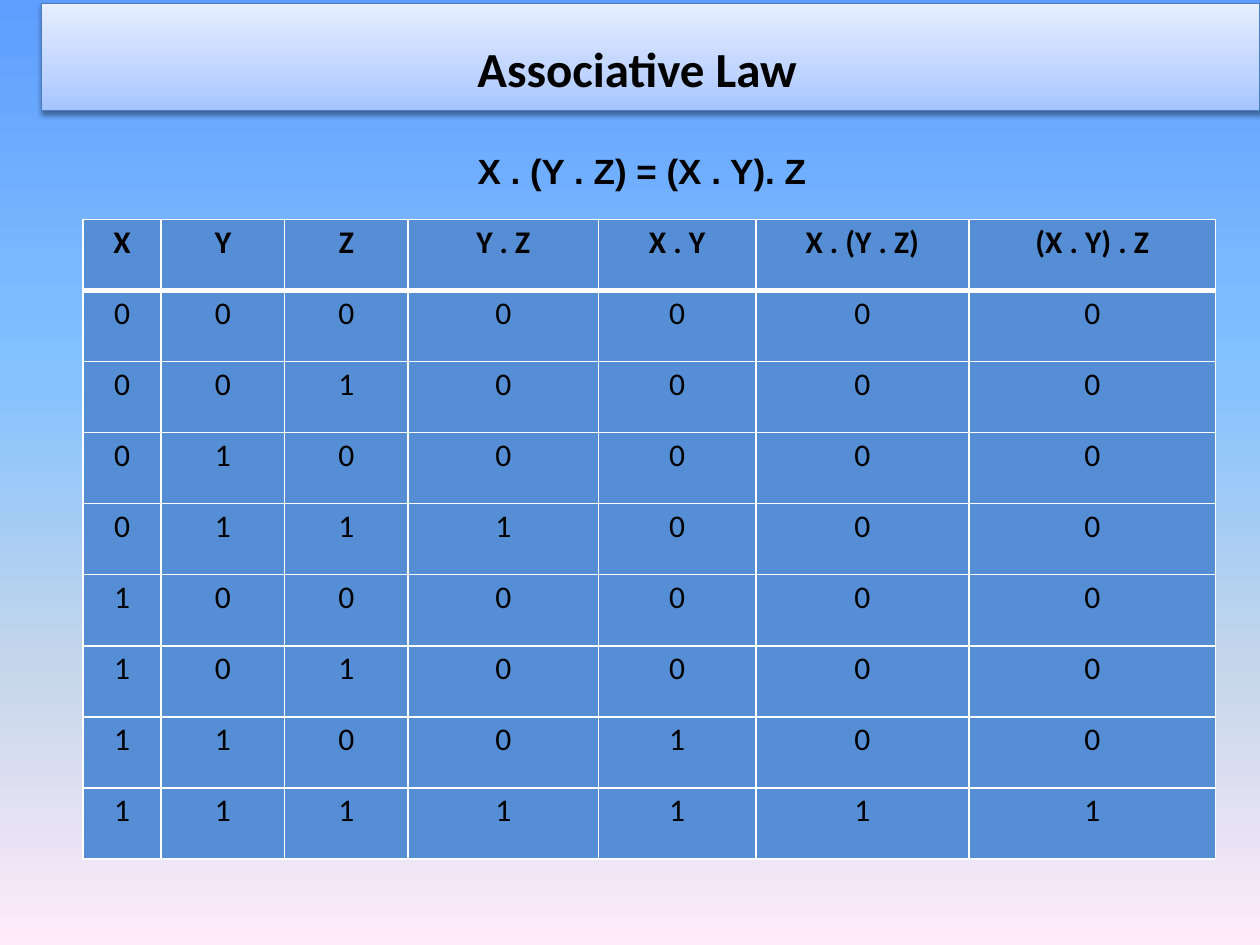
from itertools import product

from lxml import etree
from pptx import Presentation
from pptx.dml.color import RGBColor
from pptx.enum.shapes import MSO_SHAPE as Shape
from pptx.enum.text import MSO_ANCHOR as Anchor, PP_ALIGN as Align
from pptx.oxml import parse_xml
from pptx.oxml.ns import nsdecls, qn
from pptx.util import Inches, Pt

COLORS = {"text": "000000", "cell": "558ED5", "border": "FFFFFF",
          "title_line": "4B7EBC", "shadow": "000000"}
PAGE_STOPS = [(0, "5E9EFF"), (40, "85C2FF"), (70, "C4D6EB"), (100, "FFEBFA")]
TITLE_STOPS = [(0, "A4C4FF"), (35, "BFD4FF"), (100, "E6EEFF")]
HEADERS = ["X", "Y", "Z", "Y . Z", "X . Y", "X . (Y . Z)", "(X . Y) . Z"]
COLUMN_WIDTHS = [0.62, 0.98, 0.98, 1.51, 1.25, 1.69, 1.96]


def rgb(name):
    return RGBColor.from_string(COLORS[name])


def set_text(frame, text, size=18, font="Calibri", bold=False,
             align=Align.LEFT, anchor=Anchor.TOP, left=0, top=0):
    """Write one paragraph with the given format and insets in inches."""
    frame.word_wrap = True
    frame.vertical_anchor = anchor
    frame.margin_left, frame.margin_top = Inches(left), Inches(top)
    frame.margin_right = frame.margin_bottom = 0
    para = frame.paragraphs[0]
    para.alignment = align
    span = para.add_run()
    span.text = text
    span.font.size, span.font.name, span.font.bold = Pt(size), font, bold
    span.font.color.rgb = rgb("text")


def set_gradient(fill, element, stops, angle):
    """Give a fill several gradient stops; the angle runs clockwise."""
    fill.gradient()
    gradient = next(element.iter(qn("a:gradFill")))
    for child in list(gradient):
        gradient.remove(child)
    stop_list = etree.SubElement(gradient, qn("a:gsLst"))
    for position, color in stops:
        stop = etree.SubElement(stop_list, qn("a:gs"), pos=str(position * 1000))
        etree.SubElement(stop, qn("a:srgbClr"), val=color)
    etree.SubElement(gradient, qn("a:lin"), ang=str(angle * 60000), scaled="0")


def set_borders(cell, **widths):
    """Draw the cell borders; widths in points, keyed L, R, T, B."""
    for index, side in enumerate("LRTB"):
        line = parse_xml(
            f'<a:ln{side} {nsdecls("a")} w="{Pt(widths.get(side, 1))}">'
            f'<a:solidFill><a:srgbClr val="{COLORS["border"]}"/></a:solidFill>'
            f'</a:ln{side}>')
        cell._tc.get_or_add_tcPr().insert(index, line)


def add_title(page, left, top, width, height):
    bar = page.shapes.add_shape(Shape.RECTANGLE, left, top, width, height)
    set_gradient(bar.fill, bar.element, TITLE_STOPS, 270)
    bar.line.color.rgb = rgb("title_line")
    bar.line.width = Pt(0.75)
    # Soft shadow below the bar
    bar.shadow.inherit = False
    effects = next(bar.element.iter(qn("a:effectLst")))
    effects.append(parse_xml(
        f'<a:outerShdw {nsdecls("a")} blurRad="{Pt(3.1)}" dist="{Pt(1.6)}" '
        f'dir="5400000" rotWithShape="0"><a:srgbClr val="{COLORS["shadow"]}">'
        '<a:alpha val="38000"/></a:srgbClr></a:outerShdw>'))
    set_text(bar.text_frame, "Associative Law", size=28, bold=True,
             anchor=Anchor.MIDDLE, left=3.46, top=0.16)


def add_formula(page, left, top, width, height):
    box = page.shapes.add_textbox(left, top, width, height)
    set_text(box.text_frame, "X . (Y . Z) = (X . Y). Z", size=20, font="Arial",
             bold=True, left=2.29, top=0.11)


def add_truth_table(page, left, top, width, height):
    rows = [HEADERS] + [[x, y, z, y & z, x & y, x & (y & z), (x & y) & z]
                        for x, y, z in product((0, 1), repeat=3)]
    table = page.shapes.add_table(len(rows), len(HEADERS),
                                  left, top, width, height).table
    for column, column_width in zip(table.columns, COLUMN_WIDTHS):
        column.width = Inches(column_width)
    for row_index, values in enumerate(rows):
        table.rows[row_index].height = height // len(rows)
        for column_index, value in enumerate(values):
            cell = table.cell(row_index, column_index)
            cell.fill.solid()
            cell.fill.fore_color.rgb = rgb("cell")
            # Thick rule between the header and the values
            set_borders(cell, T=3 if row_index == 1 else 1,
                        B=3 if row_index == 0 else 1)
            set_text(cell.text_frame, str(value), bold=row_index == 0,
                     align=Align.CENTER)
            cell.margin_left = cell.margin_right = cell.margin_bottom = 0
            cell.margin_top = Inches(0.03)


def main():
    deck = Presentation()
    deck.slide_width, deck.slide_height = Inches(10), Inches(7.5)
    page = deck.slides.add_slide(deck.slide_layouts[6])
    set_gradient(page.background.fill, page.element, PAGE_STOPS, 90)
    add_title(page, Inches(0.33), Inches(0.03), Inches(9.67), Inches(0.85))
    add_formula(page, Inches(1.5), Inches(1.08), Inches(6.18), Inches(0.42))
    add_truth_table(page, Inches(0.66), Inches(1.74), Inches(9), Inches(5.08))
    deck.save("out.pptx")


if __name__ == "__main__":
    main()
